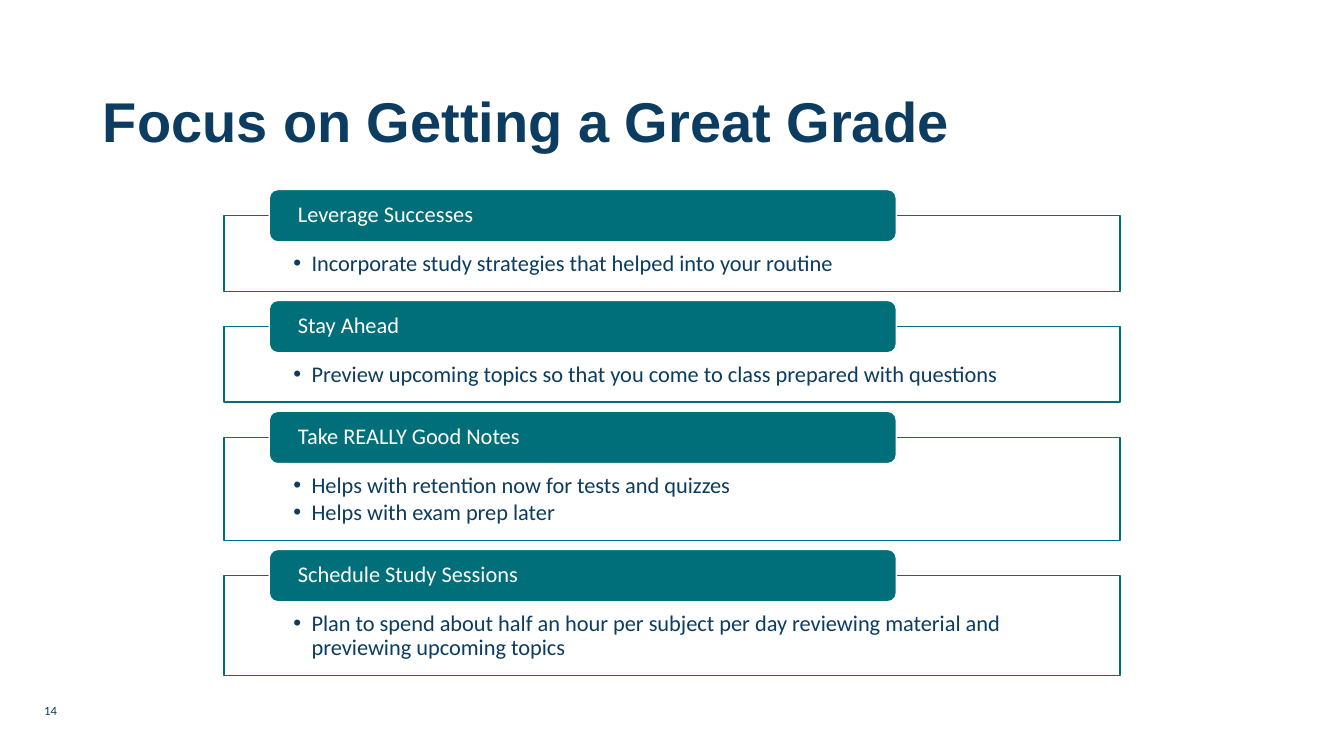
from lxml.etree import SubElement
from pptx import Presentation
from pptx.dml.color import RGBColor
from pptx.enum.shapes import MSO_SHAPE
from pptx.enum.text import MSO_ANCHOR, PP_ALIGN
from pptx.oxml.ns import qn
from pptx.util import Pt

PX = 9144
NAVY, TEAL, WHITE = "0C3C60", "006F79", "FFFFFF"
GAP = 35
SECTIONS = [
    ("Leverage Successes", 75,
     ["Incorporate study strategies that helped into your routine"]),
    ("Stay Ahead", 75,
     ["Preview upcoming topics so that you come to class prepared with questions"]),
    ("Take REALLY Good Notes", 102,
     ["Helps with retention now for tests and quizzes",
      "Helps with exam prep later"]),
    ("Schedule Study Sessions", 99,
     ["Plan to spend about half an hour per subject per day reviewing "
      "material and previewing upcoming topics"]),
]


def px(length):
    return length * PX


def color(value):
    return RGBColor.from_string(value)


def apply(target, values):
    for name, value in values.items():
        setattr(target, name, value)


def place(shape, left, top, width, height):
    apply(shape, {"left": px(left), "top": px(top),
                  "width": px(width), "height": px(height)})


def add_bullet(para):
    properties = para._p.get_or_add_pPr()
    apply_indent = {"marL": str(px(18)), "indent": str(px(-18))}
    for name, value in apply_indent.items():
        properties.set(name, value)
    SubElement(properties, qn("a:buFont")).set("typeface", "Arial")
    SubElement(properties, qn("a:buChar")).set("char", "•")


def write(shape, lines, ink, size=16, font="Calibri", bold=False,
          anchor=MSO_ANCHOR.TOP, insets=(10, 5, 10, 5), bullets=False,
          line_spacing=0.9):
    frame = shape.text_frame
    sides = ("margin_left", "margin_top", "margin_right", "margin_bottom")
    apply(frame, {"word_wrap": True, "vertical_anchor": anchor,
                  **dict(zip(sides, map(px, insets)))})
    for index, line in enumerate(lines):
        para = frame.add_paragraph() if index else frame.paragraphs[0]
        apply(para, {"alignment": PP_ALIGN.LEFT, "line_spacing": line_spacing,
                     "space_after": Pt(2.4 if bullets else 0)})
        if bullets:
            add_bullet(para)
        span = para.add_run()
        span.text = line
        apply(span.font, {"size": Pt(size), "name": font, "bold": bold})
        span.font.color.rgb = color(ink)


def add_panel(page, kind, box, fill, outline):
    panel = page.shapes.add_shape(kind, *map(px, box))
    panel.shadow.inherit = False
    panel.fill.solid()
    panel.fill.fore_color.rgb = color(fill)
    panel.line.color.rgb = color(outline)
    panel.line.width = Pt(1)
    return panel


def add_title(page, box):
    title = page.shapes.title
    place(title, *box)
    write(title, ["Focus on Getting a Great Grade"], NAVY, 40, "Arial", True,
          MSO_ANCHOR.MIDDLE)


def add_section(page, box, heading, points):
    left, top, width, height = box
    body = add_panel(page, MSO_SHAPE.RECTANGLE, box, WHITE, TEAL)
    write(body, points, NAVY, insets=(69, 36, 69, 12), bullets=True)
    tab = add_panel(page, MSO_SHAPE.ROUNDED_RECTANGLE,
                    (left + 45, top - 26, width * 7 // 10, 52), TEAL, WHITE)
    write(tab, [heading], WHITE, anchor=MSO_ANCHOR.MIDDLE,
          insets=(26, 0, 26, 0))


def add_sections(page, left, top, width):
    for heading, height, points in SECTIONS:
        add_section(page, (left, top, width, height), heading, points)
        top += height + GAP


def add_page_number(page, box):
    number = page.shapes.add_textbox(*map(px, box))
    write(number, ["14"], NAVY, 9, line_spacing=1.0)


def main():
    deck = Presentation()
    apply(deck, {"slide_width": px(1333), "slide_height": px(750)})
    page = deck.slides.add_slide(deck.slide_layouts[5])
    add_title(page, (92, 74, 1150, 98))
    add_page_number(page, (34, 692, 225, 23))
    add_sections(page, 222, 214, 889)
    deck.save("out.pptx")


if __name__ == "__main__":
    main()
